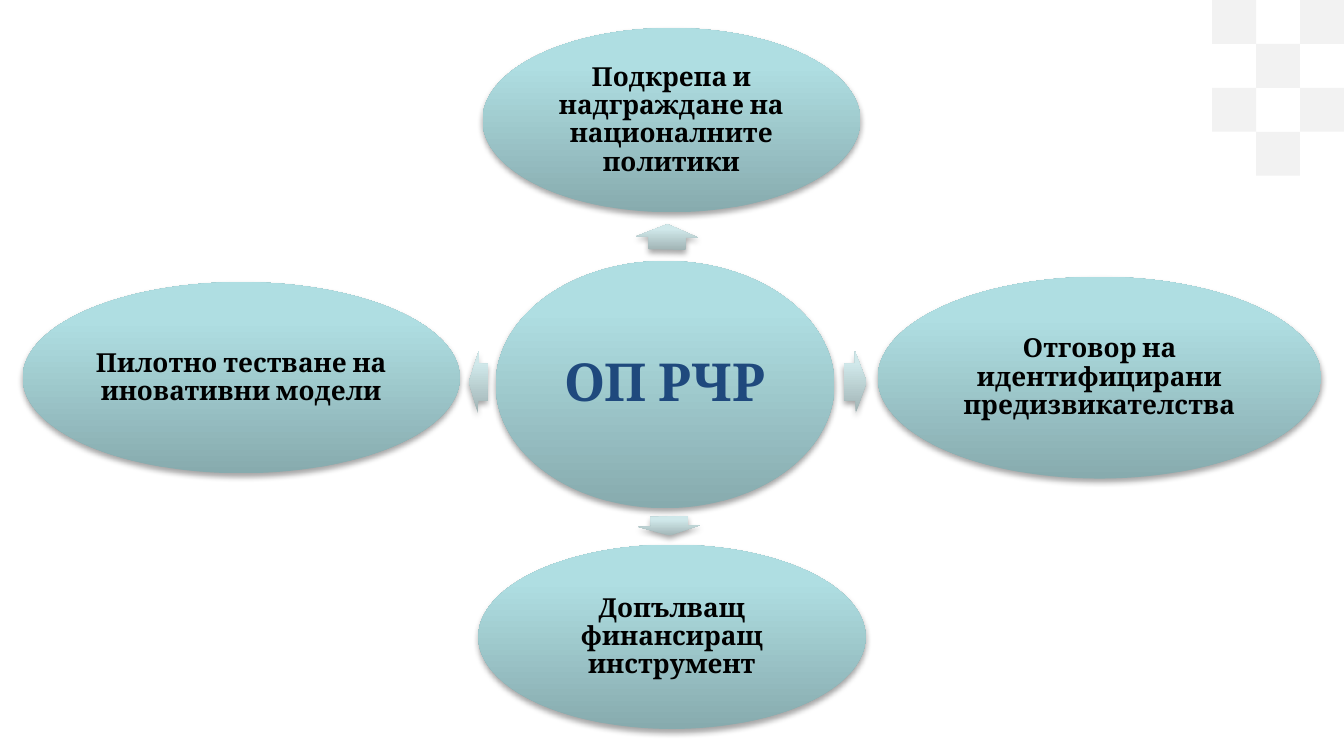
from lxml import etree
from pptx import Presentation
from pptx.dml.color import RGBColor
from pptx.enum.shapes import MSO_SHAPE
from pptx.enum.text import MSO_ANCHOR, PP_ALIGN
from pptx.oxml import parse_xml
from pptx.oxml.ns import nsdecls
from pptx.util import Cm, Pt

OVAL = MSO_SHAPE.OVAL
ARROW = MSO_SHAPE.RIGHT_ARROW
SQUARE = MSO_SHAPE.RECTANGLE
MIDDLE = MSO_ANCHOR.MIDDLE
CENTER = PP_ALIGN.CENTER

PALE_GREY = RGBColor(0xF2, 0xF2, 0xF2)
NAVY = RGBColor(0x1F, 0x49, 0x7D)
BLACK = RGBColor(0x00, 0x00, 0x00)
# Gradient colours at 0, 80 and 100 percent, from the bottom up
OVAL_COLOURS = (RGBColor(0x87, 0xAB, 0xAE), RGBColor(0xAF, 0xDE, 0xE2), RGBColor(0xAF, 0xE0, 0xE4))
ARROW_COLOURS = (RGBColor(0xA0, 0xB3, 0xB4), RGBColor(0xD0, 0xE8, 0xEA), RGBColor(0xD0, 0xEA, 0xEC))


def add_raised_shape(kind, bounds, colours):
    """Add a shape with a vertical gradient and a soft shadow below."""
    shape = slide.shapes.add_shape(kind, *(Cm(length) for length in bounds))
    shape.line.fill.background()
    stops = "".join(
        f'<a:gs pos="{percent * 1000}"><a:srgbClr val="{colour}"/></a:gs>'
        for percent, colour in zip((0, 80, 100), colours)
    )
    gradient = parse_xml(
        f'<a:gradFill {nsdecls("a")} rotWithShape="0"><a:gsLst>{stops}</a:gsLst>'
        '<a:lin ang="16200000" scaled="0"/></a:gradFill>'
    )
    shape.line._ln.addprevious(gradient)
    shape.shadow.inherit = False
    effects = shape._element.spPr.find("{*}effectLst")
    effects.append(parse_xml(
        f'<a:outerShdw {nsdecls("a")} blurRad="40000" dist="23000" dir="5400000" rotWithShape="0">'
        '<a:srgbClr val="000000"><a:alpha val="35000"/></a:srgbClr></a:outerShdw>'
    ))
    return shape


def add_oval(text, bounds, size=14, colour=BLACK, inset=0.05):
    """Add an oval with centred bold text."""
    frame = add_raised_shape(OVAL, bounds, OVAL_COLOURS).text_frame
    frame.word_wrap = True
    frame.vertical_anchor = MIDDLE
    frame.margin_left = frame.margin_right = Cm(inset)
    frame.margin_top = frame.margin_bottom = Cm(inset)
    para = frame.paragraphs[0]
    para.alignment = CENTER
    para.line_spacing = 0.9
    span = para.add_run()
    span.text = text
    span.font.name = "Cambria"
    span.font.size = Pt(size)
    span.font.bold = True
    span.font.color.rgb = colour


deck = Presentation()
deck.slide_width = Cm(25.4)
deck.slide_height = Cm(14.28)
slide = deck.slides.add_slide(deck.slide_layouts[6])

# Checkered corner
CELL = 0.83
for row in range(4):
    for column in range(3):
        if (row + column) % 2 == 0:
            left = 25.4 - (3 - column) * CELL
            square = slide.shapes.add_shape(SQUARE, Cm(left), Cm(row * CELL), Cm(CELL), Cm(CELL))
            square.fill.solid()
            square.fill.fore_color.rgb = PALE_GREY
            square.line.fill.background()
            square.shadow.inherit = False

# Central programme
add_oval("ОП РЧР", (9.37, 4.93, 6.4, 4.67), size=28, colour=NAVY, inset=0.1)

# Roles around it: text, oval bounds, arrow bounds, arrow rotation
roles = [
    ("Подкрепа и надграждане на националните политики",
     (9.12, 0.53, 7.14, 3.48), (12.37, 3.89, 0.48, 1.17), 271.2),
    ("Отговор на идентифицирани предизвикателства",
     (16.59, 5.23, 8.38, 3.81), (15.95, 6.63, 0.43, 1.17), 359.1),
    ("Допълващ финансиращ инструмент",
     (9.04, 10.29, 7.32, 3.48), (12.47, 9.35, 0.36, 1.17), 88.3),
    ("Пилотно тестване на иновативни модели",
     (0.43, 5.33, 8.26, 3.61), (8.86, 6.63, 0.36, 1.17), 180.9),
]
for text, oval_bounds, arrow_bounds, rotation in roles:
    arrow = add_raised_shape(ARROW, arrow_bounds, ARROW_COLOURS)
    arrow.adjustments[0] = 0.6
    arrow.adjustments[1] = 0.5
    arrow.rotation = rotation
    add_oval(text, oval_bounds)

deck.save("out.pptx")
